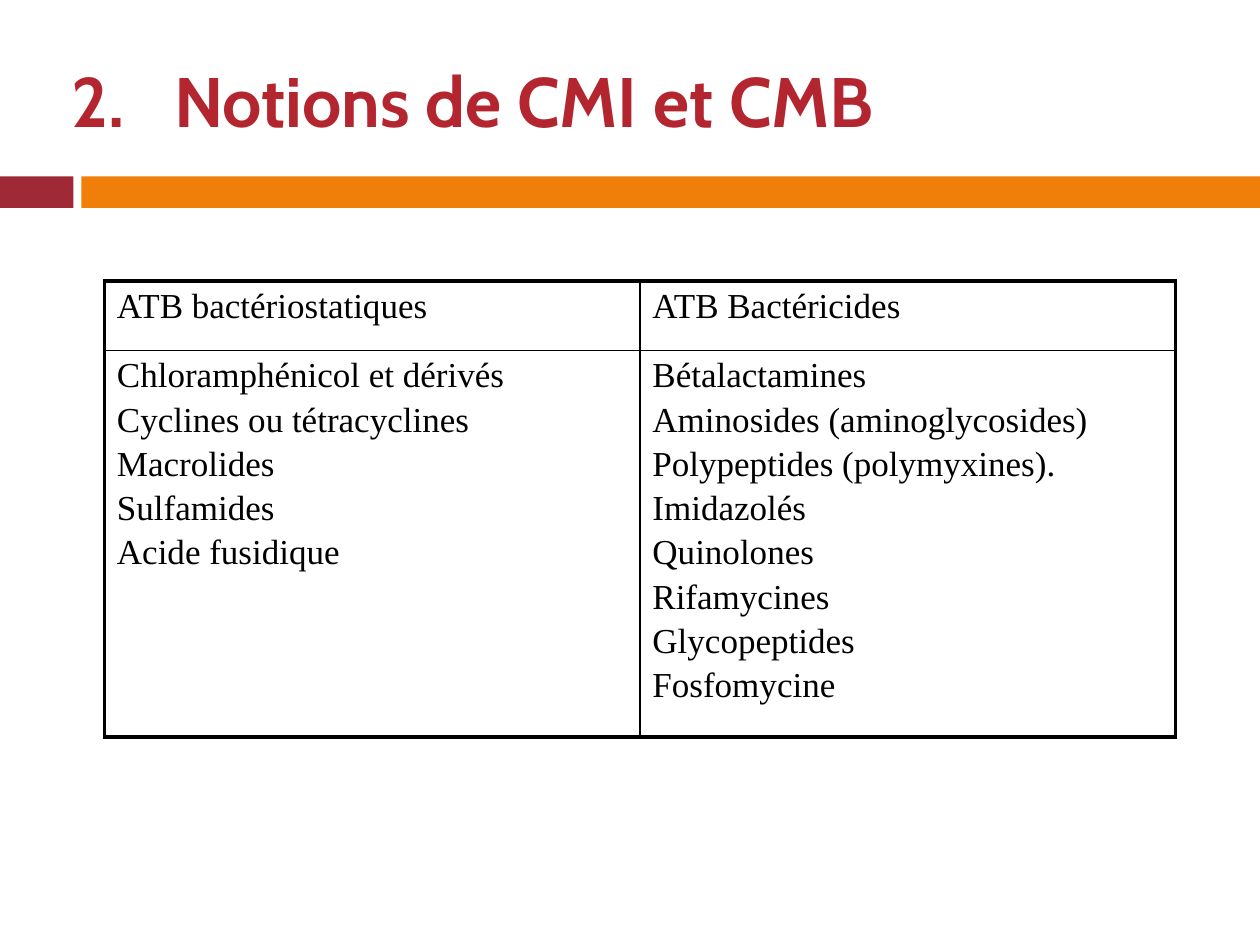
from lxml.etree import SubElement
from pptx import Presentation
from pptx.dml.color import RGBColor
from pptx.enum.shapes import MSO_SHAPE
from pptx.enum.text import MSO_ANCHOR
from pptx.oxml import parse_xml
from pptx.oxml.ns import nsdecls, qn
from pptx.util import Pt

BLACK = RGBColor(0x00, 0x00, 0x00)
TITLE_RED = RGBColor(0xB3, 0x26, 0x2F)
BAND_RED = RGBColor(0x9F, 0x29, 0x36)
BAND_ORANGE = RGBColor(0xF0, 0x7F, 0x09)
THICK, THIN = 2.25, 1

ANTIBIOTICS = {
    "ATB bactériostatiques": [
        "Chloramphénicol et dérivés",
        "Cyclines ou tétracyclines",
        "Macrolides",
        "Sulfamides",
        "Acide fusidique",
    ],
    "ATB Bactéricides": [
        "Bétalactamines",
        "Aminosides (aminoglycosides)",
        "Polypeptides (polymyxines).",
        "Imidazolés",
        "Quinolones",
        "Rifamycines",
        "Glycopeptides",
        "Fosfomycine",
    ],
}


def write_text(frame, lines, font="Times New Roman", size=20, color=BLACK,
               bold=False, gap=0, number=None, indent=0):
    for index, line in enumerate(lines):
        paragraph = frame.paragraphs[0] if index == 0 else frame.add_paragraph()
        if index:
            paragraph.space_before = Pt(gap)
        if number:
            properties = paragraph._p.get_or_add_pPr()
            properties.set("marL", str(Pt(indent)))
            properties.set("indent", str(-Pt(indent)))
            SubElement(properties, qn("a:buAutoNum"),
                       type="arabicPeriod", startAt=str(number))
        run = paragraph.add_run()
        run.text = line
        run.font.name = font
        run.font.size = Pt(size)
        run.font.bold = bold
        run.font.color.rgb = color


def add_title(slide, title):
    heading = slide.shapes.add_textbox(Pt(34), Pt(18), Pt(672), Pt(78))
    frame = heading.text_frame
    frame.word_wrap = True
    frame.vertical_anchor = MSO_ANCHOR.MIDDLE
    write_text(frame, [title], font="Cabin", size=40, color=TITLE_RED,
               bold=True, number=2, indent=58.5)


def add_band(slide, left, width, color):
    band = slide.shapes.add_shape(MSO_SHAPE.RECTANGLE,
                                  Pt(left), Pt(100.8), Pt(width), Pt(18))
    band.shadow.inherit = False
    band.fill.solid()
    band.fill.fore_color.rgb = color
    band.line.fill.background()


def set_borders(cell, widths):
    properties = cell._tc.get_or_add_tcPr()
    for position, (side, width) in enumerate(widths.items()):
        properties.insert(position, parse_xml(
            f'<a:ln{side} {nsdecls("a")} w="{Pt(width)}"><a:solidFill>'
            f'<a:srgbClr val="{BLACK}"/></a:solidFill></a:ln{side}>'))


def add_comparison(slide, groups):
    contents = [[[name] for name in groups], list(groups.values())]
    heights = [39.6, 213]
    last_row, last_column = len(contents) - 1, len(groups) - 1
    table = slide.shapes.add_table(len(contents), len(groups), Pt(59.6), Pt(160.6),
                                   Pt(612), Pt(sum(heights))).table
    table.first_row = table.horz_banding = False
    for row, (height, row_lines) in enumerate(zip(heights, contents)):
        table.rows[row].height = Pt(height)
        for column, lines in enumerate(row_lines):
            cell = table.cell(row, column)
            cell.fill.background()
            set_borders(cell, {
                "L": THICK if column == 0 else THIN,
                "R": THICK if column == last_column else THIN,
                "T": THICK if row == 0 else THIN,
                "B": THICK if row == last_row else THIN,
            })
            write_text(cell.text_frame, lines, gap=3.1)


def main():
    deck = Presentation()
    deck.slide_width, deck.slide_height = Pt(720), Pt(540)
    slide = deck.slides.add_slide(deck.slide_layouts[6])
    add_band(slide, 0, 42, BAND_RED)
    add_band(slide, 46.5, 673.5, BAND_ORANGE)
    add_title(slide, "Notions de CMI et CMB")
    add_comparison(slide, ANTIBIOTICS)
    deck.save("out.pptx")


if __name__ == "__main__":
    main()
